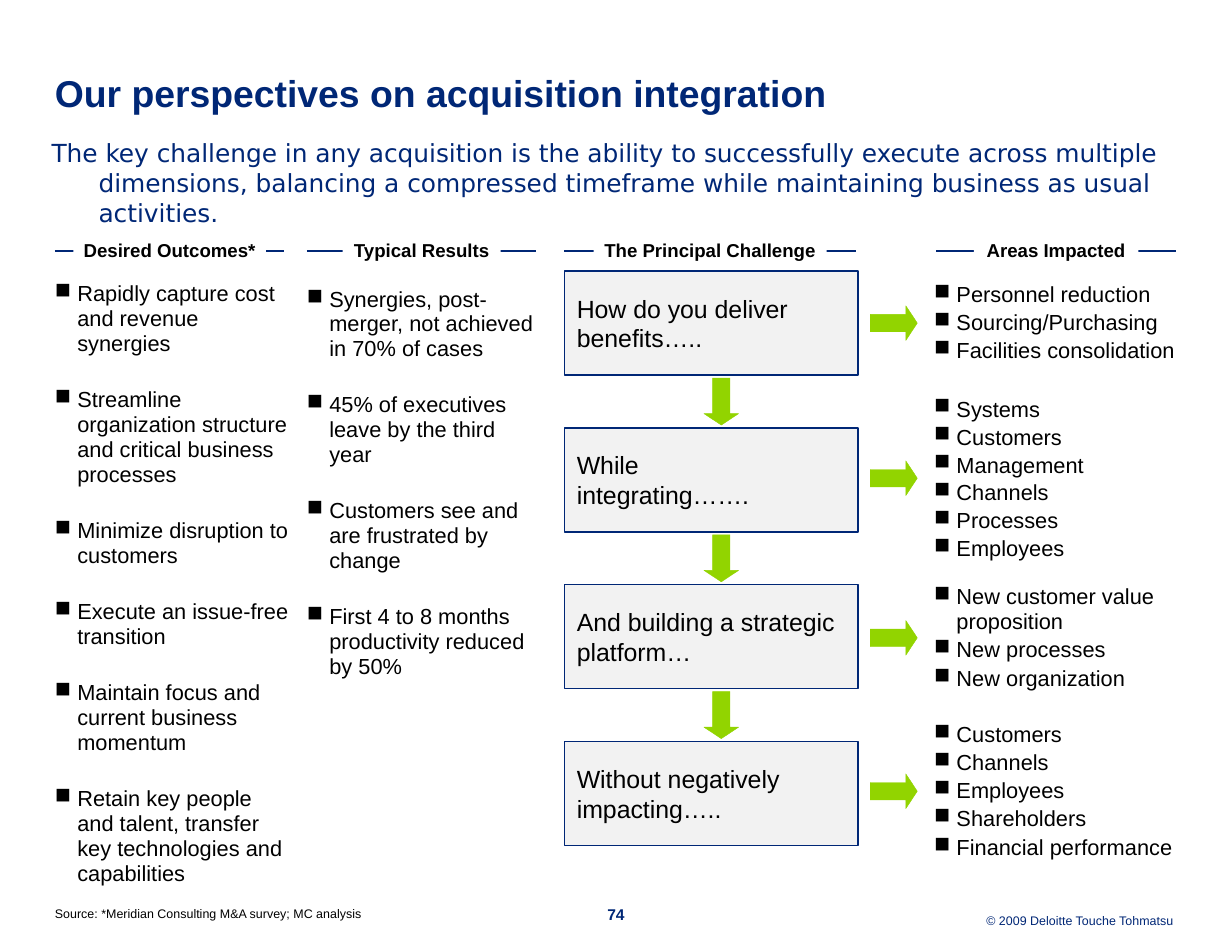
"""Build the acquisition integration perspectives slide."""
from lxml import etree
from pptx import Presentation
from pptx.dml.color import RGBColor
from pptx.enum.shapes import MSO_CONNECTOR, MSO_SHAPE
from pptx.enum.text import MSO_ANCHOR, PP_ALIGN
from pptx.oxml.ns import qn
from pptx.util import Inches, Pt

COLORS = {"navy": "002776", "black": "000000", "white": "FFFFFF",
          "panel": "F2F2F2", "green": "92D400"}

TITLE = "Our perspectives on acquisition integration"
KEY_MESSAGE = ("The key challenge in any acquisition is the ability to successfully execute "
               "across multiple dimensions, balancing a compressed timeframe while "
               "maintaining business as usual activities.")
SOURCE = "Source: *Meridian Consulting M&A survey; MC analysis"
COPYRIGHT = "© 2009 Deloitte Touche Tohmatsu"
PAGE_NUMBER = "74"

HEADINGS = [
    ("Desired Outcomes*", 0.49, 2.54, 1.72),
    ("Typical Results", 2.74, 4.79, 1.41),
    ("The Principal Challenge", 5.04, 7.64, 2.08),
    ("Areas Impacted", 8.36, 10.5, 1.47),
]
OUTCOMES = [
    "Rapidly capture cost and revenue synergies",
    "Streamline organization structure and critical business processes",
    "Minimize disruption to customers",
    "Execute an issue-free transition",
    "Maintain focus and current business momentum",
    "Retain key people and talent, transfer key technologies and capabilities",
]
RESULTS = [
    "Synergies, post-merger, not achieved in 70% of cases",
    "45% of executives leave by the third year",
    "Customers see and are frustrated by change",
    "First 4 to 8 months productivity reduced by 50%",
]
CHALLENGES = ["How do you deliver\nbenefits…..", "While\nintegrating…….",
              "And building a strategic platform…", "Without negatively\nimpacting….."]
AREAS = [
    (2.52, 0.73, 0.95, 2.2,
     ["Personnel reduction", "Sourcing/Purchasing", "Facilities consolidation"]),
    (3.53, 1.48, 1.0, 1.1,
     ["Systems", "Customers", "Management", "Channels", "Processes", "Employees"]),
    (5.22, 0.95, 0.95, 2.2,
     ["New customer value proposition", "New processes", "New organization"]),
    (6.45, 1.23, 0.95, 2.2,
     ["Customers", "Channels", "Employees", "Shareholders", "Financial performance"]),
]

BOX_LEFT, BOX_TOP, BOX_WIDTH, BOX_HEIGHT, BOX_PITCH = 5.04, 2.42, 2.62, 0.93, 1.4
ARROW_WIDTH, ARROW_HEIGHT = 0.42, 0.31
RULE_Y, HEADING_HEIGHT = 2.24, 0.2
LIST_GAP = 20.2


def color(name):
    return RGBColor.from_string(COLORS[name])


def set_font(paragraph, size, color_name="black", bold=False, name="Arial"):
    paragraph.font.name = name
    paragraph.font.size = Pt(size)
    paragraph.font.bold = bold
    paragraph.font.color.rgb = color(color_name)


def set_frame(shape, anchor=MSO_ANCHOR.TOP, wrap=True, side=0, edge=0):
    frame = shape.text_frame
    frame.word_wrap = wrap
    frame.vertical_anchor = anchor
    frame.margin_left = frame.margin_right = Inches(side)
    frame.margin_top = frame.margin_bottom = Inches(edge)
    return frame


def set_indent(paragraph, indent, bullet=None):
    properties = paragraph._p.get_or_add_pPr()
    properties.set("marL", str(Inches(indent)))
    properties.set("indent", str(-Inches(indent)))
    if bullet:
        etree.SubElement(properties, qn("a:buChar")).set("char", bullet)


def add_text(slide, text, place, size, color_name="black", bold=False, name="Arial",
             align=PP_ALIGN.LEFT, spacing=None, anchor=MSO_ANCHOR.TOP):
    box = slide.shapes.add_textbox(*map(Inches, place))
    paragraph = set_frame(box, anchor).paragraphs[0]
    paragraph.text = text
    paragraph.alignment = align
    if spacing:
        paragraph.line_spacing = spacing
    set_font(paragraph, size, color_name, bold, name)
    return paragraph


def add_list(slide, items, place, spacing, gap):
    box = slide.shapes.add_textbox(*map(Inches, place))
    frame = set_frame(box, MSO_ANCHOR.MIDDLE)
    for index, item in enumerate(items):
        paragraph = frame.add_paragraph() if index else frame.paragraphs[0]
        paragraph.text = item
        set_indent(paragraph, 0.2, "■")
        paragraph.line_spacing = spacing
        paragraph.space_before = Pt(gap if index else 0)
        set_font(paragraph, 14)


def add_filled_shape(slide, kind, place, fill, line=None, line_width=1):
    shape = slide.shapes.add_shape(kind, *map(Inches, place))
    shape.shadow.inherit = False
    shape.fill.solid()
    shape.fill.fore_color.rgb = color(fill)
    if line:
        shape.line.color.rgb = color(line)
        shape.line.width = Pt(line_width)
    else:
        shape.line.fill.background()
    return shape


def add_arrow(slide, center_x, center_y, rotation=0):
    place = (center_x - ARROW_WIDTH / 2, center_y - ARROW_HEIGHT / 2,
             ARROW_WIDTH, ARROW_HEIGHT)
    arrow = add_filled_shape(slide, MSO_SHAPE.RIGHT_ARROW, place, "green", "green", 0.25)
    arrow.adjustments[0] = 0.5
    arrow.adjustments[1] = 0.33
    arrow.rotation = rotation


def add_heading(slide, text, left, right, width):
    rule = slide.shapes.add_connector(MSO_CONNECTOR.STRAIGHT, Inches(left), Inches(RULE_Y),
                                      Inches(right), Inches(RULE_Y))
    rule.line.color.rgb = color("navy")
    rule.line.width = Pt(1)
    etree.SubElement(rule._element.spPr, qn("a:effectLst"))
    place = ((left + right - width) / 2, RULE_Y - HEADING_HEIGHT / 2, width, HEADING_HEIGHT)
    label = add_filled_shape(slide, MSO_SHAPE.RECTANGLE, place, "white")
    paragraph = set_frame(label, MSO_ANCHOR.BOTTOM, wrap=False, side=0.08).paragraphs[0]
    paragraph.text = text
    paragraph.alignment = PP_ALIGN.CENTER
    paragraph.line_spacing = 0.95
    set_font(paragraph, 12, bold=True)


def add_challenge(slide, text, top):
    box = add_filled_shape(slide, MSO_SHAPE.RECTANGLE,
                           (BOX_LEFT, top, BOX_WIDTH, BOX_HEIGHT), "panel", "navy")
    paragraph = set_frame(box, MSO_ANCHOR.MIDDLE, side=0.11, edge=0.06).paragraphs[0]
    paragraph.text = text
    paragraph.alignment = PP_ALIGN.LEFT
    set_font(paragraph, 16)


def main():
    presentation = Presentation()
    presentation.slide_width, presentation.slide_height = Inches(11), Inches(8.5)
    slide = presentation.slides.add_slide(presentation.slide_layouts[6])

    add_text(slide, TITLE, (0.49, 0.43, 10.13, 0.78), 24, "navy", True,
             spacing=1.05, anchor=MSO_ANCHOR.MIDDLE)
    message = add_text(slide, KEY_MESSAGE, (0.46, 1.23, 10.08, 0.85), 16, "navy",
                       name="DejaVu Sans")
    set_indent(message, 0.42)

    for heading in HEADINGS:
        add_heading(slide, *heading)
    add_list(slide, OUTCOMES, (0.49, 2.5, 2.11, 5.43), 0.95, LIST_GAP)
    add_list(slide, RESULTS, (2.74, 2.55, 2.09, 3.53), 0.95, LIST_GAP)

    for index, text in enumerate(CHALLENGES):
        top = BOX_TOP + index * BOX_PITCH
        add_challenge(slide, text, top)
        if index:
            add_arrow(slide, 6.44, top - (BOX_PITCH - BOX_HEIGHT) / 2, 90)
    for top, height, spacing, gap, items in AREAS:
        add_list(slide, items, (8.34, top, 2.21, height), spacing, gap)
        add_arrow(slide, 7.98, top + height / 2)

    add_text(slide, SOURCE, (0.49, 8.09, 3.17, 0.13), 8)
    add_text(slide, PAGE_NUMBER, (5.33, 8.08, 0.34, 0.18), 10, "navy", True,
             align=PP_ALIGN.CENTER, spacing=Pt(12))
    add_text(slide, COPYRIGHT, (7.7, 8.12, 2.78, 0.18), 8, "navy",
             align=PP_ALIGN.RIGHT, spacing=Pt(12))
    presentation.save("out.pptx")


if __name__ == "__main__":
    main()
